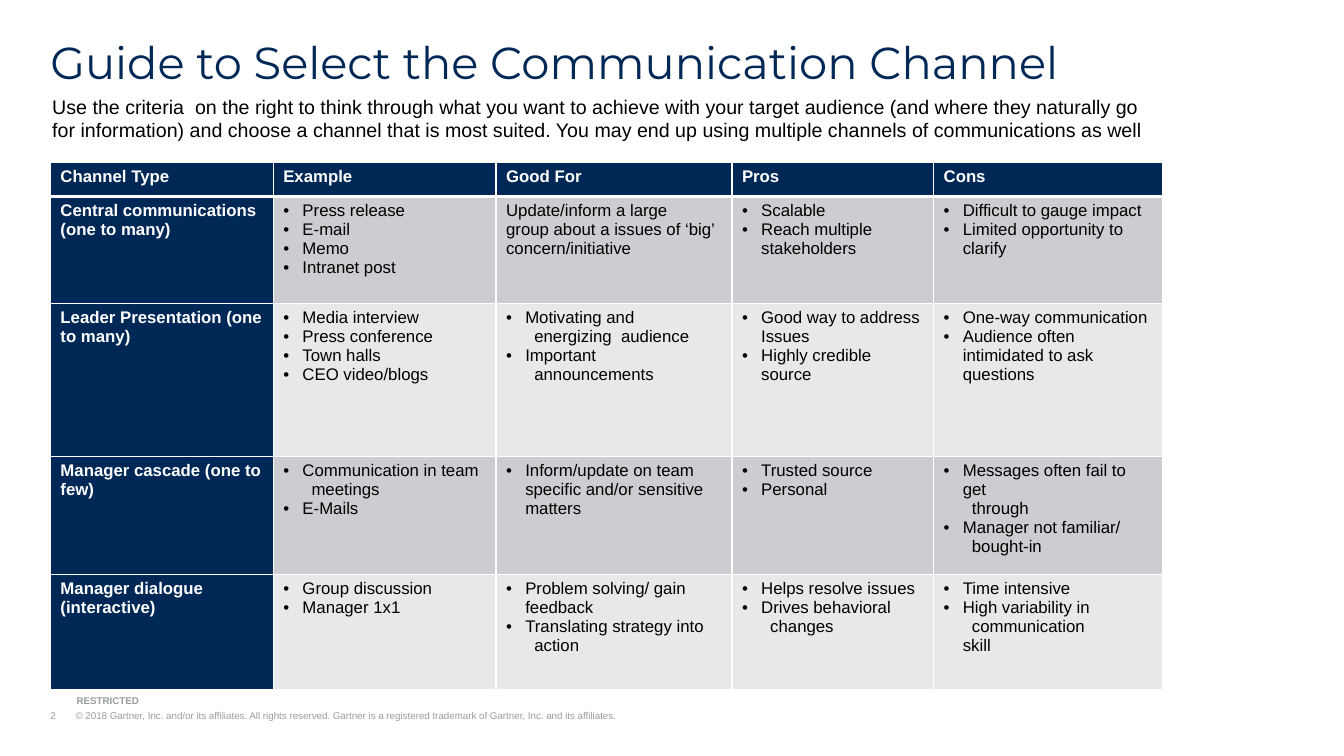
from lxml.etree import SubElement
from pptx import Presentation
from pptx.dml.color import RGBColor
from pptx.enum.text import MSO_ANCHOR
from pptx.oxml.ns import qn
from pptx.util import Inches, Pt

COLORS = {"navy": "002856", "white": "FFFFFF", "black": "000000",
          "dark band": "CCCDD1", "light band": "E7E8E9", "footer": "979D9D"}
TITLE = "Guide to Select the Communication Channel"
INTRO = ("Use the criteria  on the right to think through what you want to achieve with your "
         "target audience (and where they naturally go for information) and choose a channel "
         "that is most suited. You may end up using multiple channels of communications as well")
COPYRIGHT = ("2\t© 2018 Gartner, Inc. and/or its affiliates. All rights reserved. "
             "Gartner is a registered trademark of Gartner, Inc. and its affiliates.")
RESTRICTED = "RESTRICTED"

HEADERS = ["Channel Type", "Example", "Good For", "Pros", "Cons"]
CHANNELS = [
    [["Central communications (one to many)"],
     ["• Press release", "• E-mail", "• Memo", "• Intranet post"],
     ["Update/inform a large", "group about a issues of ‘big’ concern/initiative"],
     ["• Scalable", "• Reach multiple stakeholders"],
     ["• Difficult to gauge impact", "• Limited opportunity to clarify"]],
    [["Leader Presentation (one to many)"],
     ["• Media interview", "• Press conference", "• Town halls", "• CEO video/blogs"],
     ["• Motivating and", "> energizing  audience", "• Important", "> announcements"],
     ["• Good way to address Issues", "• Highly credible source"],
     ["• One-way communication", "• Audience often intimidated to ask questions"]],
    [["Manager cascade (one to few)"],
     ["• Communication in team", "> meetings", "• E-Mails"],
     ["• Inform/update on team specific and/or sensitive matters"],
     ["• Trusted source", "• Personal"],
     ["• Messages often fail to get", "> through", "• Manager not familiar/", "> bought-in"]],
    [["Manager dialogue", "(interactive)"],
     ["• Group discussion", "• Manager 1x1"],
     ["• Problem solving/ gain feedback", "• Translating strategy into", "> action"],
     ["• Helps resolve issues", "• Drives behavioral", "> changes"],
     ["• Time intensive", "• High variability in", "> communication", "- skill"]],
]
COLUMN_WIDTHS = [2.21, 2.21, 2.34, 2, 2.27]
ROW_HEIGHTS = [0.34, 1.06, 1.52, 1.17, 1.14]
BULLET_INDENT = 0.19
INDENTS = {"• ": BULLET_INDENT, "> ": 0.28, "- ": BULLET_INDENT}


def write(frame, lines, size=12, font="Arial", color="black", bold=False, spacing=None, tab=None):
    """Fill a text frame with one paragraph per line; a leading mark sets bullet and indent."""
    frame.word_wrap = True
    for index, line in enumerate(lines):
        para = frame.paragraphs[0] if index == 0 else frame.add_paragraph()
        mark = line[:2] if line[:2] in INDENTS else ""
        properties = para._p.get_or_add_pPr()
        if mark:
            properties.set("marL", str(Inches(INDENTS[mark])))
            properties.set("indent", str(-Inches(BULLET_INDENT) if mark == "• " else 0))
        if mark == "• ":
            SubElement(properties, qn("a:buFont"), typeface="Arial")
            SubElement(properties, qn("a:buChar"), char="•")
        if tab:
            properties.set("marL", str(Inches(tab)))
            properties.set("indent", str(-Inches(tab)))
            stops = SubElement(properties, qn("a:tabLst"))
            SubElement(stops, qn("a:tab"), pos=str(Inches(tab)), algn="l")
        if spacing:
            para.line_spacing = spacing
        span = para.add_run()
        span.text = line[len(mark):]
        span.font.size, span.font.name, span.font.bold = Pt(size), font, bold
        span.font.color.rgb = RGBColor.from_string(COLORS[color])


def add_text(page, text, left, top, width, height, inset=True, anchor=MSO_ANCHOR.TOP, **style):
    """Place one text box on the page."""
    box = page.shapes.add_textbox(Inches(left), Inches(top), Inches(width), Inches(height))
    frame = box.text_frame
    frame.vertical_anchor = anchor
    if not inset:
        frame.margin_left = frame.margin_right = frame.margin_top = frame.margin_bottom = 0
    write(frame, [text], **style)


def style_cell(cell, fill, top=1, bottom=1):
    """Give a cell white borders and a solid fill."""
    properties = cell._tc.get_or_add_tcPr()
    for side, width in {"L": 1, "R": 1, "T": top, "B": bottom}.items():
        line = SubElement(properties, qn(f"a:ln{side}"), w=str(Pt(width)))
        solid = SubElement(line, qn("a:solidFill"))
        SubElement(solid, qn("a:srgbClr"), val=COLORS["white"])
    cell.fill.solid()
    cell.fill.fore_color.rgb = RGBColor.from_string(COLORS[fill])


def add_channel_table(page):
    """Build the table of channels."""
    rows = [[[header] for header in HEADERS]] + CHANNELS
    table = page.shapes.add_table(len(rows), len(HEADERS), Inches(0.5), Inches(1.61),
                                  Inches(sum(COLUMN_WIDTHS)), Inches(sum(ROW_HEIGHTS))).table
    for column, width in zip(table.columns, COLUMN_WIDTHS):
        column.width = Inches(width)
    for row, height in zip(table.rows, ROW_HEIGHTS):
        row.height = Inches(height)
    for row_index, row in enumerate(rows):
        band = "dark band" if row_index % 2 else "light band"
        for column_index, lines in enumerate(row):
            cell = table.cell(row_index, column_index)
            heading = row_index == 0 or column_index == 0
            style_cell(cell, "navy" if heading else band,
                       top=3 if row_index == 1 else 1, bottom=3 if row_index == 0 else 1)
            write(cell.text_frame, lines, color="white" if heading else "black", bold=heading)


def main():
    """Build and save the slide."""
    deck = Presentation()
    deck.slide_width, deck.slide_height = Inches(13.33), Inches(7.5)
    page = deck.slides.add_slide(deck.slide_layouts[6])
    footer = dict(inset=False, anchor=MSO_ANCHOR.BOTTOM, size=7, color="footer")
    add_text(page, COPYRIGHT, 0.5, 7.04, 7.99, 0.12, tab=0.25, **footer)
    add_text(page, RESTRICTED, 0.76, 6.89, 2.53, 0.12, bold=True, **footer)
    add_text(page, TITLE, 0.5, 0.4, 12.33, 0.48, inset=False,
             size=32, font="Montserrat", color="navy", spacing=0.9)
    add_channel_table(page)
    add_text(page, INTRO, 0.42, 0.89, 11.03, 0.57, size=14)
    deck.save("out.pptx")


if __name__ == "__main__":
    main()
